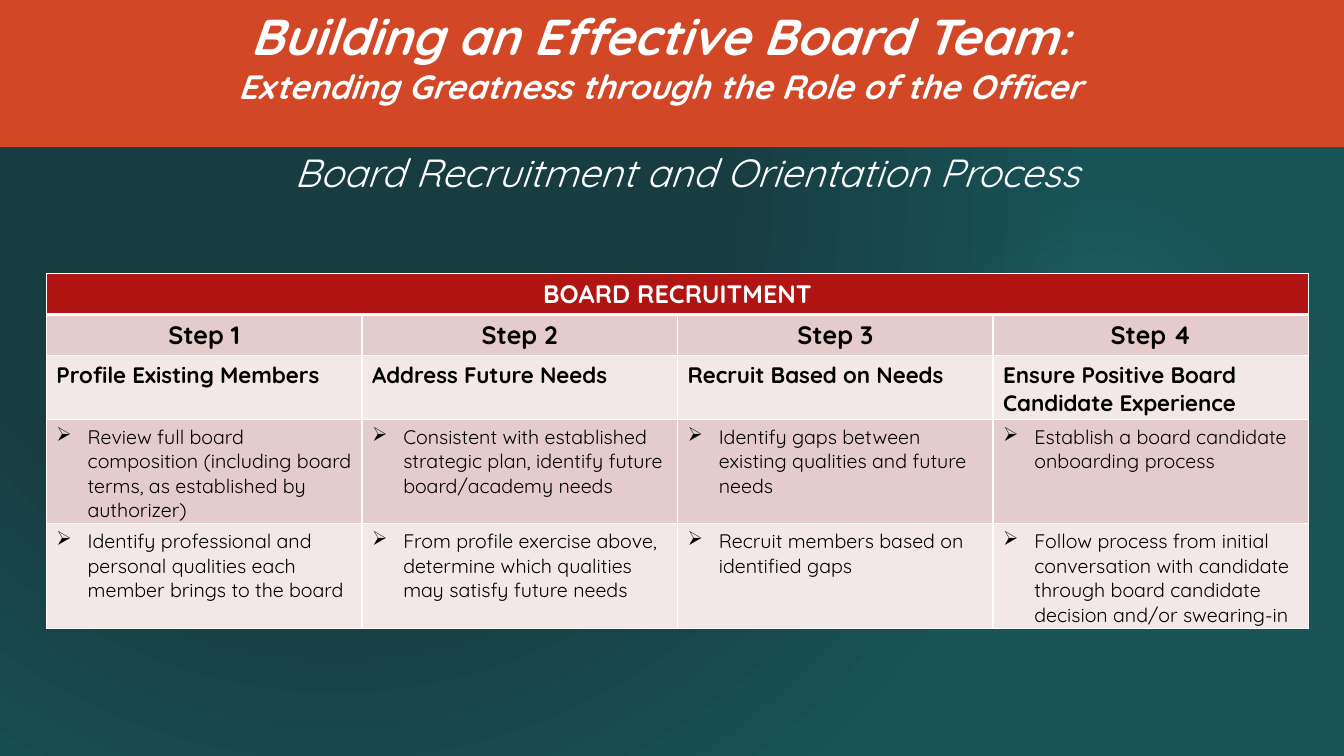
from lxml import etree
from pptx import Presentation
from pptx.dml.color import RGBColor
from pptx.enum.shapes import MSO_SHAPE
from pptx.enum.text import MSO_ANCHOR, PP_ALIGN
from pptx.oxml import parse_xml
from pptx.oxml.ns import nsdecls, qn
from pptx.util import Inches, Pt

CENTER, LEFT = PP_ALIGN.CENTER, PP_ALIGN.LEFT
TOP = MSO_ANCHOR.TOP
RECTANGLE, OVAL = MSO_SHAPE.RECTANGLE, MSO_SHAPE.OVAL
COLORS = {
    "white": "FFFFFF", "black": "000000", "orange": "D24726", "red": "B01513",
    "dark": "173D40", "teal": "185358", "glow": "50B9C1",
    "rose": "E4CCCC", "pale": "F2E8E7",
}


def set_radial_fill(properties, stops, focus):
    """Replace the solid fill with a circular gradient of (position, color, alpha) stops, all in percent."""
    stop_xml = "".join(
        f'<a:gs pos="{position * 1000}"><a:srgbClr val="{COLORS[color]}">'
        f'<a:alpha val="{alpha * 1000}"/></a:srgbClr></a:gs>'
        for position, color, alpha in stops)
    sides = " ".join(f'{side}="{value * 1000}"' for side, value in zip("ltrb", focus))
    gradient = parse_xml(
        f'<a:gradFill {nsdecls("a")} rotWithShape="1"><a:gsLst>{stop_xml}</a:gsLst>'
        f'<a:path path="circle"><a:fillToRect {sides}/></a:path></a:gradFill>')
    properties.replace(properties.find(qn("a:solidFill")), gradient)


def add_span(para, text, color="white", **formats):
    span = para.add_run()
    span.text = text
    span.font.name = "Quicksand"
    span.font.color.rgb = RGBColor.from_string(COLORS[color])
    for name, value in formats.items():
        setattr(span.font, name, value)


deck = Presentation()
deck.slide_width, deck.slide_height = Inches(13.33), Inches(7.5)
page = deck.slides.add_slide(deck.slide_layouts[5])

# Background, glow and banner
page.background.fill.solid()
background = page.background._cSld.find(qn("p:bg")).find(qn("p:bgPr"))
set_radial_fill(background, [(48, "dark", 100), (100, "teal", 100)], (50, 50, 100, 100))

glow = page.shapes.add_shape(OVAL, Inches(9.41), Inches(1.83), Inches(3.08), Inches(3.08))
banner = page.shapes.add_shape(RECTANGLE, 0, 0, deck.slide_width, Inches(1.46))
for shape, color in ((glow, "glow"), (banner, "orange")):
    shape.shadow.inherit = False
    shape.line.fill.background()
    shape.fill.solid()
    shape.fill.fore_color.rgb = RGBColor.from_string(COLORS[color])
set_radial_fill(glow._element.spPr,
                [(0, "glow", 7), (36, "glow", 6), (69, "glow", 0)], (50, 50, 50, 50))

# Title and subtitle
title = page.shapes.title
page.shapes._spTree.append(title._element)
title.left, title.top, title.width, title.height = (
    Inches(value) for value in (1.7, 0, 9.69, 1.92))
subtitle = page.shapes.add_textbox(Inches(1.82), Inches(1.42), Inches(9.98), Inches(0.57))
for box in (title, subtitle):
    box.text_frame.word_wrap = True
    box.text_frame.vertical_anchor = TOP
    box.text_frame.paragraphs[0].alignment = CENTER

para = title.text_frame.paragraphs[0]
add_span(para, "Building an Effective Board Team", size=Pt(36), bold=True, italic=True)
add_span(para, ":", size=Pt(32), bold=True, italic=True)
para.add_line_break()
add_span(para, "Extending Greatness through the Role of the Officer",
         size=Pt(24), bold=True, italic=True)
add_span(subtitle.text_frame.paragraphs[0], "Board Recruitment and Orientation Process",
         size=Pt(28), italic=True)

# Recruitment table
ROWS = [
    ["BOARD RECRUITMENT", "", "", ""],
    ["Step 1", "Step 2", "Step 3", "Step 4"],
    ["Profile Existing Members", "Address Future Needs", "Recruit Based on Needs",
     "Ensure Positive Board Candidate Experience"],
    ["Review full board composition (including board terms, as established by authorizer)",
     "Consistent with established strategic plan, identify future board/academy needs",
     "Identify gaps between existing qualities and future needs",
     "Establish a board candidate onboarding process"],
    ["Identify professional and personal qualities each member brings to the board",
     "From profile exercise above, determine which qualities may satisfy future needs",
     "Recruit members based on identified gaps",
     "Follow process from initial conversation with candidate through board candidate "
     "decision and/or swearing-in"],
]
# fill, text color, size, bold, alignment, bulleted
ROW_STYLES = [
    ("red", "white", 18, True, CENTER, False),
    ("rose", "black", 18, True, CENTER, False),
    ("pale", "black", 16, True, LEFT, False),
    ("rose", "black", 14, False, LEFT, True),
    ("pale", "black", 14, False, LEFT, True),
]
table = page.shapes.add_table(5, 4, Inches(0.46), Inches(2.71),
                              Inches(12.53), Inches(2.05)).table
for column in table.columns:
    column.width = Inches(3.13)
table.cell(0, 0).merge(table.cell(0, 3))

for row, (texts, style) in enumerate(zip(ROWS, ROW_STYLES)):
    fill, color, size, bold, alignment, bulleted = style
    table.rows[row].height = Inches(0.41)
    for column, text in enumerate(texts):
        cell = table.cell(row, column)
        cell.fill.solid()
        cell.fill.fore_color.rgb = RGBColor.from_string(COLORS[fill])
        heavy_side = {0: "B", 1: "T"}.get(row)
        for index, side in enumerate("LRTB"):
            width = Pt(3) if side == heavy_side else Pt(1)
            border = parse_xml(
                f'<a:ln{side} {nsdecls("a")} w="{width}"><a:solidFill>'
                f'<a:srgbClr val="{COLORS["white"]}"/></a:solidFill></a:ln{side}>')
            cell._tc.tcPr.insert(index, border)
        if not text:
            continue
        para = cell.text_frame.paragraphs[0]
        para.alignment = alignment
        if bulleted:
            properties = para._p.get_or_add_pPr()
            properties.set("marL", str(Inches(0.31)))
            properties.set("indent", str(Inches(-0.31)))
            etree.SubElement(properties, qn("a:buChar"), char="➢")
        add_span(para, text, color, size=Pt(size), bold=bold)

deck.save("out.pptx")
